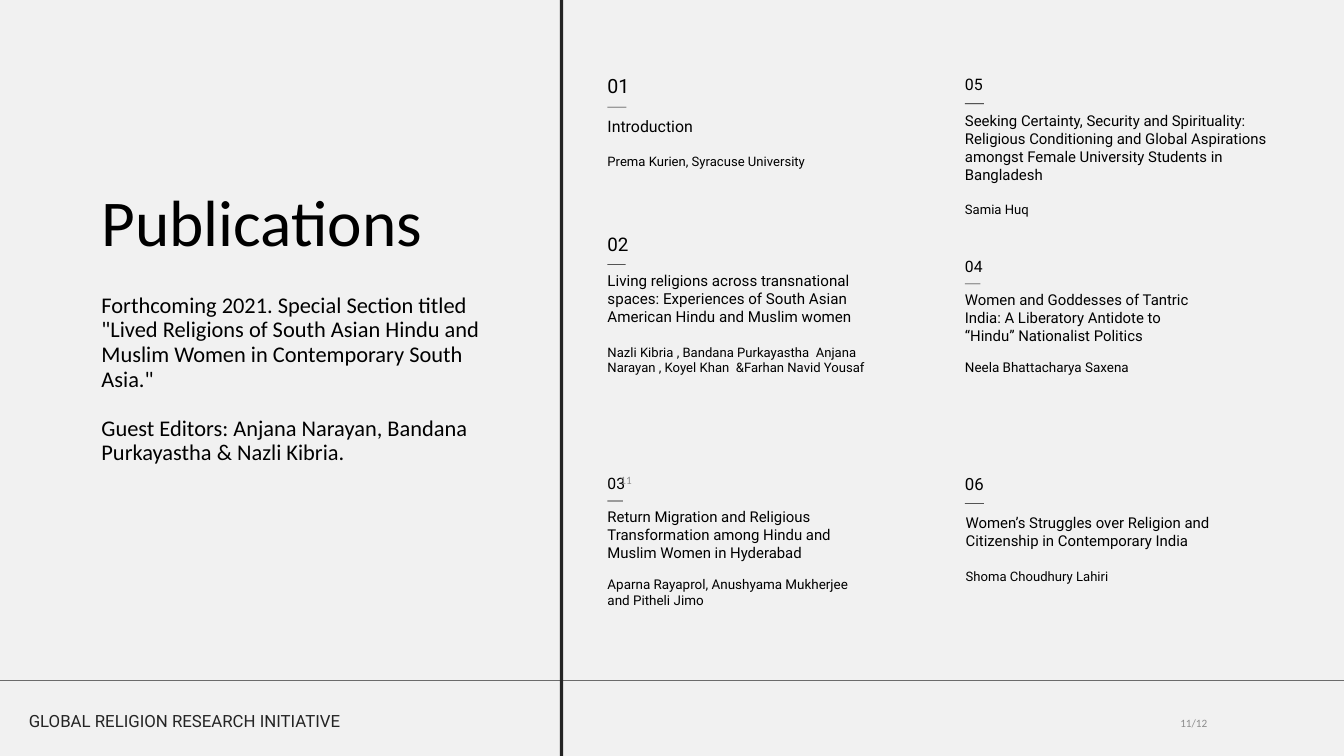
from dataclasses import dataclass
from pptx import Presentation
from pptx.dml.color import RGBColor
from pptx.enum.shapes import MSO_SHAPE
from pptx.enum.text import MSO_ANCHOR, MSO_AUTO_SIZE, PP_ALIGN
from pptx.util import Inches, Pt


@dataclass(frozen=True)
class Theme:
    paper: str = "F1F1F1"
    ink: str = "000000"
    frame: str = "242424"
    muted: str = "8C8C8C"
    heading_font: str = "Calibri"
    entry_font: str = "Roboto"
    title_size: float = 70
    lead_size: float = 24
    footer_size: float = 18
    page_number_size: float = 12


@dataclass(frozen=True)
class Box:
    left: float
    top: float
    width: float
    height: float

    def inside(self, left, top, width, height):
        return Box(self.left + left, self.top + top, width, height)

    def lengths(self):
        return [Inches(n) for n in (self.left, self.top, self.width, self.height)]


@dataclass(frozen=True)
class Entry:
    box: Box
    number: str
    title: str
    author: str
    sizes: tuple
    offsets: tuple
    rule_width: float = 0.28
    indent: float = 0


THEME = Theme()
LEFT_COLUMN, RIGHT_COLUMN = 9.04, 14.36

ENTRIES = [
    Entry(Box(LEFT_COLUMN, 1.13, 4.5, 1.39), "01", "Introduction",
          "Prema Kurien, Syracuse University",
          (21, 17, 14), (0.46, 0.61, 1.16)),
    Entry(Box(RIGHT_COLUMN, 1.14, 4.5, 2.33), "05",
          "Seeking Certainty, Security and Spirituality: Religious Conditioning and "
          "Global Aspirations amongst Female University Students in Bangladesh",
          "Samia Huq", (17, 16, 14), (0.4, 0.52, 1.86)),
    Entry(Box(RIGHT_COLUMN, 7.08, 4.5, 1.91), "06",
          "Women’s Struggles over Religion and Citizenship in Contemporary India",
          "Shoma Choudhury Lahiri", (18, 16, 14), (0.41, 0.57, 1.38), indent=0.01),
    Entry(Box(LEFT_COLUMN, 3.49, 4.31, 2.1), "02",
          "Living religions across transnational spaces: Experiences of South Asian "
          "American Hindu and Muslim women",
          "Nazli Kibria , Bandana Purkayastha  Anjana Narayan , Koyel Khan  "
          "&Farhan Navid Yousaf",
          (20.1, 16.2, 14), (0.44, 0.55, 1.63), rule_width=0.27),
    Entry(Box(LEFT_COLUMN, 7.08, 3.6, 2.22), "03",
          "Return Migration and Religious Transformation among Hindu and Muslim "
          "Women in Hyderabad",
          "Aparna Rayaprol, Anushyama Mukherjee and Pitheli Jimo",
          (16.8, 16, 14.4), (0.37, 0.47, 1.49), rule_width=0.23),
    Entry(Box(RIGHT_COLUMN, 3.85, 3.6, 2.22), "04",
          "Women and Goddesses of Tantric India: A Liberatory Antidote to “Hindu” "
          "Nationalist Politics",
          "Neela Bhattacharya Saxena",
          (16.8, 16, 14.4), (0.37, 0.47, 1.49), rule_width=0.23),
]


def write(shape, text, font, size, color, spacing=None, align=PP_ALIGN.LEFT,
          anchor=MSO_ANCHOR.TOP, inset=0):
    frame = shape.text_frame
    frame.text = text
    frame.word_wrap = True
    frame.auto_size = MSO_AUTO_SIZE.NONE
    frame.vertical_anchor = anchor
    frame.margin_left = frame.margin_right = Inches(inset)
    frame.margin_top = frame.margin_bottom = Inches(inset / 2)
    for para in frame.paragraphs:
        para.alignment = align
        if spacing:
            para.line_spacing = Pt(round(size * spacing, 1))
        for span in para.runs:
            span.font.name = font
            span.font.size = Pt(size)
            span.font.color.rgb = RGBColor.from_string(color)
    return frame


def add_text(shapes, box, *style, **options):
    return write(shapes.add_textbox(*box.lengths()), *style, **options)


def add_bar(shapes, box, color):
    bar = shapes.add_shape(MSO_SHAPE.RECTANGLE, *box.lengths())
    bar.shadow.inherit = False
    bar.fill.solid()
    bar.fill.fore_color.rgb = RGBColor.from_string(color)
    bar.line.fill.background()


def add_footer(page, box):
    add_bar(page.shapes, box.inside(0, 0, box.width, 0.01), THEME.frame)
    add_text(page.shapes, box.inside(0.33, 0.4, 5.35, 0.39),
             "GLOBAL RELIGION RESEARCH INITIATIVE", THEME.entry_font,
             THEME.footer_size, THEME.frame, spacing=1.244,
             align=PP_ALIGN.JUSTIFY, inset=0.1)


def add_introduction(page, box):
    title = page.shapes.title
    title.left, title.top, title.width, title.height = box.inside(
        0, 0, box.width, 1.1).lengths()
    write(title, "Publications", THEME.heading_font, THEME.title_size,
          THEME.ink, spacing=1.1)
    lead = add_text(
        page.shapes, box.inside(0, 1.56, box.width, box.height - 1.56),
        "Forthcoming 2021. Special Section titled \"Lived Religions of South Asian "
        "Hindu and Muslim Women in Contemporary South Asia.\"\n"
        "Guest Editors: Anjana Narayan, Bandana Purkayastha & Nazli Kibria.",
        THEME.heading_font, THEME.lead_size, THEME.ink, spacing=1.1)
    lead.paragraphs[1].space_before = Pt(26.4)


def add_entry(page, entry):
    box = entry.box
    shapes = page.shapes.add_group_shape().shapes
    rule_top, title_top, author_top = entry.offsets
    number_size, title_size, author_size = entry.sizes
    add_bar(shapes, box.inside(0, rule_top, entry.rule_width, 0.01), THEME.ink)
    for text, size, spacing, indent, top, width, bottom in (
        (entry.author, author_size, 1.2, entry.indent, author_top, box.width, box.height),
        (entry.title, title_size, 1.2, entry.indent, title_top, box.width,
         author_top - 0.27),
        (entry.number, number_size, 1.1, 0, 0, 0.8, rule_top - 0.12),
    ):
        add_text(shapes, box.inside(indent, top, width, bottom - top), text,
                 THEME.entry_font, size, THEME.ink, spacing=spacing)


def add_page_number(page, box, text, align):
    add_text(page.shapes, box, text, THEME.heading_font, THEME.page_number_size,
             THEME.muted, align=align, anchor=MSO_ANCHOR.MIDDLE, inset=0.1)


def main():
    deck = Presentation()
    deck.slide_width, deck.slide_height = Inches(20), Inches(11.25)
    page = deck.slides.add_slide(deck.slide_layouts[5])
    page.background.fill.solid()
    page.background.fill.fore_color.rgb = RGBColor.from_string(THEME.paper)
    add_footer(page, Box(0, 10.12, 20, 1.13))
    add_introduction(page, Box(1.51, 2.8, 5.8, 6.11))
    for entry in ENTRIES:
        add_entry(page, entry)
    add_bar(page.shapes, Box(8.33, 0, 0.05, 11.25), THEME.frame)
    add_page_number(page, Box(16.18, 10.56, 3.17, 0.4), "11/12", PP_ALIGN.CENTER)
    add_page_number(page, Box(7.17, 6.95, 2.33, 0.4), "11", PP_ALIGN.RIGHT)
    deck.save("out.pptx")


if __name__ == "__main__":
    main()
